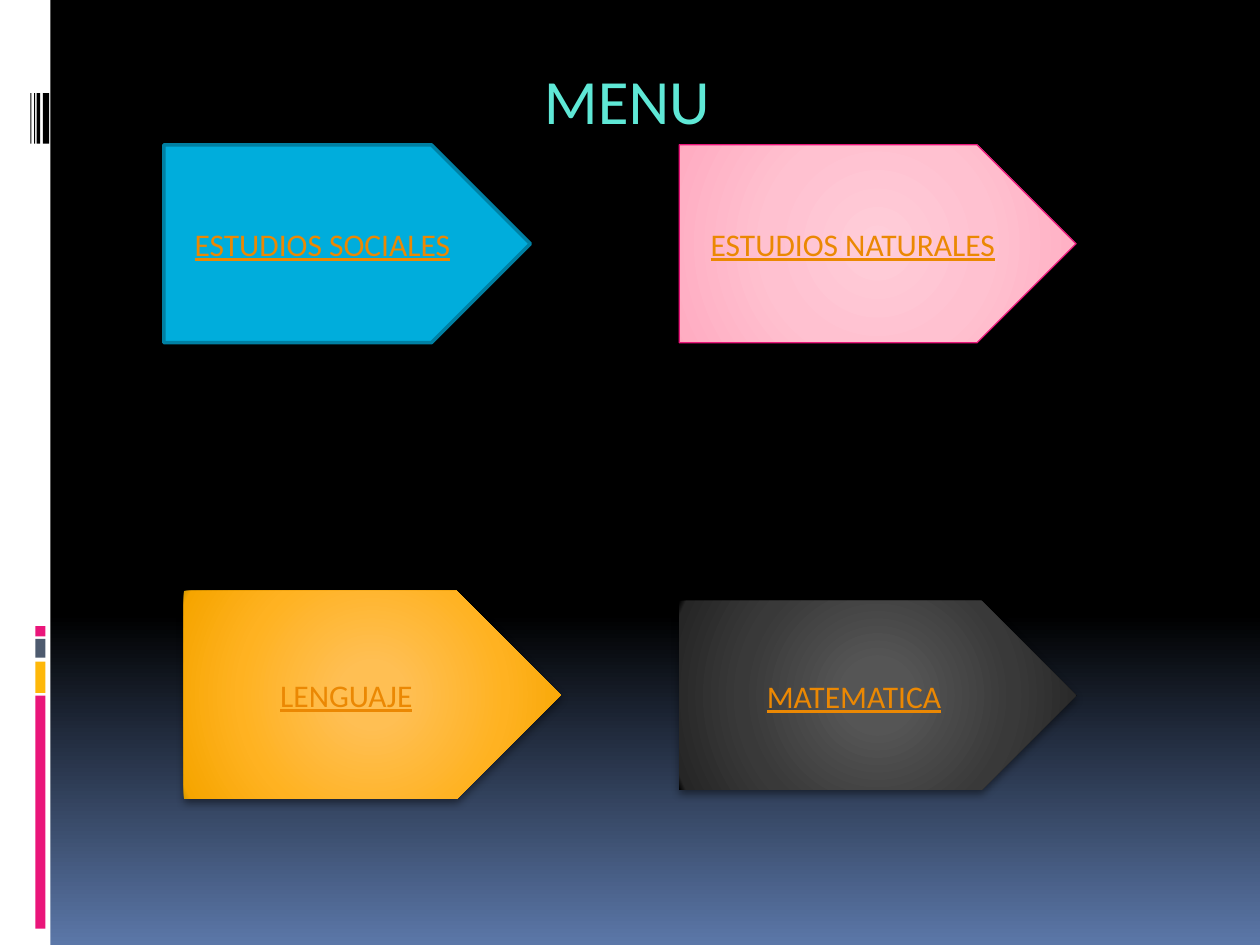
from lxml import etree
from pptx import Presentation
from pptx.dml.color import RGBColor
from pptx.enum.shapes import MSO_SHAPE
from pptx.enum.text import MSO_ANCHOR, PP_ALIGN
from pptx.oxml.ns import qn
from pptx.util import Inches, Pt

BLACK = RGBColor(0, 0, 0)
WHITE = RGBColor(255, 255, 255)
MAGENTA = RGBColor(0xEA, 0x15, 0x7A)
AMBER = RGBColor(0xFE, 0xB8, 0x0A)
SLATE = RGBColor(0x4E, 0x5B, 0x6F)
BLUE = RGBColor(0x00, 0xAD, 0xDC)
DARK_BLUE = RGBColor(0x00, 0x80, 0xA3)
ORANGE = RGBColor(0xEB, 0x88, 0x03)
AQUA = RGBColor(0x5F, 0xE8, 0xD6)

NIGHT_SKY = [(0, "000000"), (65, "000000"), (100, "5B77A8")]
PINK_GLOW = [(0, "FFCDD9"), (50, "FFC1D0"), (97, "FFADC2"), (100, "FFA7BE")]
GOLD_GLOW = [(0, "FFBF54"), (15, "FFBF53"), (62, "FFB221"), (97, "F6A500"), (100, "D69900")]
GRAY_GLOW = [(0, "555555"), (15, "555555"), (62, "393939"), (97, "262626"), (100, "000000")]

# Side decoration: (top, height, colour) and (left, width)
SIDE_BLOCKS = [(5.52, 1.85, MAGENTA), (5.25, 0.25, AMBER), (5.07, 0.15, SLATE), (4.97, 0.08, MAGENTA)]
BARCODE = [(0.34, 0.05), (0.29, 0.03), (0.27, 0.01), (0.24, 0.01)]

# Text, box, fill (colour or gradient stops), outline (colour, points)
MENU_ITEMS = [
    ("ESTUDIOS SOCIALES", (1.3, 1.15, 2.91, 1.57), BLUE, (DARK_BLUE, 2)),
    ("ESTUDIOS NATURALES", (5.39, 1.15, 3.15, 1.57), PINK_GLOW, (MAGENTA, 0.75)),
    ("LENGUAJE", (1.46, 4.69, 2.99, 1.65), GOLD_GLOW, None),
    ("MATEMATICA", (5.39, 4.77, 3.15, 1.5), GRAY_GLOW, None),
]


def add_child(parent, tag, **attributes):
    return etree.SubElement(parent, qn(tag), {k: str(v) for k, v in attributes.items()})


def apply_gradient(fill, element, stops, radial):
    """Give the fill, found inside element, the stops as (percent, hex) pairs."""
    fill.gradient()
    gradient = element.find(".//" + qn("a:gradFill"))
    for child in list(gradient):
        gradient.remove(child)
    stop_list = add_child(gradient, "a:gsLst")
    for percent, color in stops:
        add_child(add_child(stop_list, "a:gs", pos=percent * 1000), "a:srgbClr", val=color)
    if radial:
        focus = add_child(gradient, "a:path", path="circle")
        add_child(focus, "a:fillToRect", l=50000, t=50000, r=50000, b=50000)
    else:
        add_child(gradient, "a:lin", ang=90 * 60000, scaled=0)


def add_soft_shadow(shape):
    effects = shape.element.spPr.find(qn("a:effectLst"))
    shadow = add_child(effects, "a:outerShdw", blurRad=Pt(5), dist=Pt(2),
                       dir=90 * 60000, rotWithShape=0)
    add_child(add_child(shadow, "a:srgbClr", val="000000"), "a:alpha", val=43000)


def add_plain_shape(slide, kind, box):
    shape = slide.shapes.add_shape(kind, *map(Inches, box))
    shape.shadow.inherit = False
    shape.line.fill.background()
    return shape


def add_bar(slide, box, color):
    bar = add_plain_shape(slide, MSO_SHAPE.RECTANGLE, box)
    bar.fill.solid()
    bar.fill.fore_color.rgb = color


def write_text(shape, text, color, **font_values):
    frame = shape.text_frame
    frame.text = text
    frame.vertical_anchor = MSO_ANCHOR.MIDDLE
    paragraph = frame.paragraphs[0]
    paragraph.alignment = PP_ALIGN.CENTER
    font = paragraph.runs[0].font
    font.color.rgb = color
    for name, value in {"name": "Calibri", **font_values}.items():
        setattr(font, name, value)


def add_menu_item(slide, text, box, fill, outline):
    arrow = add_plain_shape(slide, MSO_SHAPE.PENTAGON, box)
    if isinstance(fill, RGBColor):
        arrow.fill.solid()
        arrow.fill.fore_color.rgb = fill
    else:
        apply_gradient(arrow.fill, arrow.element.spPr, fill, radial=True)
        add_soft_shadow(arrow)
    if outline:
        color, width = outline
        arrow.line.color.rgb = color
        arrow.line.width = Pt(width)
    write_text(arrow, text, ORANGE, size=Pt(18), underline=True)


def main():
    presentation = Presentation()
    presentation.slide_width, presentation.slide_height = Inches(10), Inches(7.5)
    slide = presentation.slides.add_slide(presentation.slide_layouts[5])
    apply_gradient(slide.background.fill, slide.element, NIGHT_SKY, radial=False)

    add_bar(slide, (0, 0, 0.4, 7.5), WHITE)
    for top, height, color in SIDE_BLOCKS:
        add_bar(slide, (0.28, top, 0.08, height), color)
    for left, width in BARCODE:
        add_bar(slide, (left, 0.74, width, 0.4), BLACK)
    for item in MENU_ITEMS:
        add_menu_item(slide, *item)

    title = slide.shapes.title
    title.left, title.top, title.width, title.height = map(Inches, (4.1, 0.43, 1.75, 0.71))
    write_text(title, "MENU", AQUA, size=Pt(36))
    title.text_frame.word_wrap = False
    presentation.save("out.pptx")


if __name__ == "__main__":
    main()
